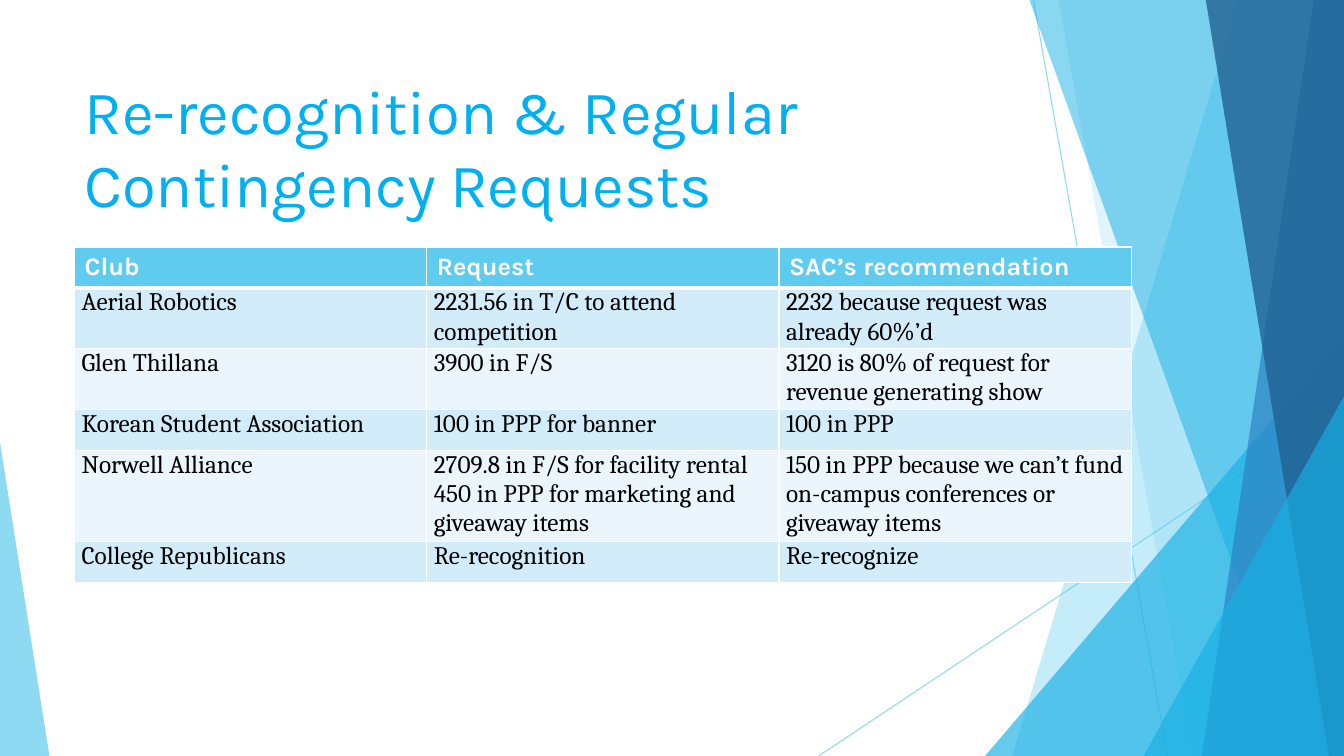
from lxml import etree
from pptx import Presentation
from pptx.dml.color import RGBColor
from pptx.enum.shapes import MSO_CONNECTOR, MSO_SHAPE
from pptx.enum.text import MSO_ANCHOR
from pptx.oxml import parse_xml
from pptx.oxml.ns import nsdecls, qn
from pptx.util import Inches, Pt

SLIDE_W, SLIDE_H = 13.33, 7.5
SKY, AZURE, BLUE, NAVY = "5FCBEF", "17B0E4", "2E83C3", "226292"
WHITE, BLACK, TITLE_BLUE = "FFFFFF", "000000", "00B0F0"
BAND_DARK, BAND_LIGHT = "D2ECF9", "EAF6FC"

HEADINGS = ["Club", "Request", "SAC’s recommendation"]
REQUESTS = [
    ["Aerial Robotics", "2231.56 in T/C to attend competition",
     "2232 because request was already 60%’d"],
    ["Glen Thillana", "3900 in F/S",
     "3120 is 80% of request for revenue generating show"],
    ["Korean Student Association", "100 in PPP for banner", "100 in PPP"],
    ["Norwell Alliance",
     "2709.8 in F/S for facility rental\n"
     "450 in PPP for marketing and giveaway items",
     "150 in PPP because we can’t fund on-campus conferences or giveaway items"],
    ["College Republicans", "Re-recognition", "Re-recognize"],
]


def rgb(colour):
    return RGBColor.from_string(colour)


def set_opacity(fill_owner, percent):
    """Add an alpha value to the solid colour just set on a fill or line."""
    colour = next(fill_owner.iter(qn("a:srgbClr")))
    etree.SubElement(colour, qn("a:alpha")).set("val", str(percent * 1000))


def paint(shape, colour, opacity):
    shape.shadow.inherit = False
    shape.fill.solid()
    shape.fill.fore_color.rgb = rgb(colour)
    set_opacity(shape.fill._xPr, opacity)
    shape.line.fill.background()


def add_hairline(slide, x1, y1, x2, y2):
    hairline = slide.shapes.add_connector(
        MSO_CONNECTOR.STRAIGHT, Inches(x1), Inches(y1), Inches(x2), Inches(y2))
    hairline.line.width = Pt(0.75)
    hairline.line.color.rgb = rgb(SKY)
    properties = hairline._element.spPr
    set_opacity(properties, 70)
    etree.SubElement(properties, qn("a:effectLst"))


def add_panel(slide, top_x, bottom_x, colour, opacity):
    """Full-height panel with a slanted left side, up to the right slide edge."""
    outline = slide.shapes.build_freeform(Inches(top_x), 0)
    outline.add_line_segments(
        [(Inches(x), Inches(y)) for x, y in
         [(SLIDE_W, 0), (SLIDE_W, SLIDE_H), (bottom_x, SLIDE_H)]], close=True)
    paint(outline.convert_to_shape(), colour, opacity)


def add_corner(slide, left, top, width, apex, colour, opacity):
    """Right triangle on the bottom edge; apex 0 is left, 1 is right."""
    corner = slide.shapes.add_shape(
        MSO_SHAPE.ISOSCELES_TRIANGLE, Inches(left), Inches(top),
        Inches(width), Inches(SLIDE_H - top))
    corner.adjustments[0] = apex
    paint(corner, colour, opacity)


def add_backdrop(slide):
    add_hairline(slide, 10.25, 0, 11.58, SLIDE_H)
    add_hairline(slide, SLIDE_W, 4.03, 8.12, SLIDE_H)
    add_panel(slide, 12.28, 10.04, SKY, 36)
    add_panel(slide, 10.5, 11.83, SKY, 20)
    add_corner(slide, 9.77, 3.33, 3.56, 1, AZURE, 66)
    add_panel(slide, 10.21, 12.91, AZURE, 50)
    add_panel(slide, 13.03, 11.92, BLUE, 70)
    add_panel(slide, 11.96, 13.18, NAVY, 80)
    add_corner(slide, 11.34, 3.93, 1.99, 1, AZURE, 66)
    add_corner(slide, 0, 4.39, 0.49, 0, SKY, 70)


def add_run(paragraph, text, size, font, colour, bold=False):
    run = paragraph.add_run()
    run.text = text
    run.font.size = Pt(size)
    run.font.name = font
    run.font.bold = bold
    run.font.color.rgb = rgb(colour)


def add_title(slide, left, top, width, height):
    title = slide.shapes.add_textbox(
        Inches(left), Inches(top), Inches(width), Inches(height)).text_frame
    title.word_wrap = True
    title.vertical_anchor = MSO_ANCHOR.TOP
    add_run(title.paragraphs[0], "Re-recognition & Regular Contingency Requests",
            44, "Karla", TITLE_BLUE)


def set_borders(cell, top, bottom):
    properties = cell._tc.get_or_add_tcPr()
    widths = {"lnL": 1, "lnR": 1, "lnT": top, "lnB": bottom}
    for position, (side, width) in enumerate(widths.items()):
        properties.insert(position, parse_xml(
            f'<a:{side} {nsdecls("a")} w="{Pt(width)}"><a:solidFill>'
            f'<a:srgbClr val="{WHITE}"/></a:solidFill></a:{side}>'))


def fill_cell(cell, text, band, font, colour, bold):
    cell.fill.solid()
    cell.fill.fore_color.rgb = rgb(band)
    for number, line in enumerate(text.split("\n")):
        frame = cell.text_frame
        paragraph = frame.add_paragraph() if number else frame.paragraphs[0]
        add_run(paragraph, line, 18, font, colour, bold)


def add_requests_table(slide, left, top, width, row_height):
    rows = [HEADINGS] + REQUESTS
    table = slide.shapes.add_table(
        len(rows), len(HEADINGS), Inches(left), Inches(top),
        Inches(width), Inches(row_height * len(rows))).table
    for row_number, texts in enumerate(rows):
        table.rows[row_number].height = Inches(row_height)
        for column, text in enumerate(texts):
            cell = table.cell(row_number, column)
            if row_number == 0:
                fill_cell(cell, text, SKY, "Karla", WHITE, True)
                set_borders(cell, 1, 3)
                continue
            band = BAND_DARK if row_number % 2 else BAND_LIGHT
            fill_cell(cell, text, band, "Cambria", BLACK, False)
            cell.margin_left = cell.margin_right = Inches(0.07)
            cell.margin_top = cell.margin_bottom = 0
            set_borders(cell, 3 if row_number == 1 else 1, 1)


def main():
    presentation = Presentation()
    presentation.slide_width = Inches(SLIDE_W)
    presentation.slide_height = Inches(SLIDE_H)
    slide = presentation.slides.add_slide(presentation.slide_layouts[6])
    add_backdrop(slide)
    add_title(slide, 0.74, 0.67, 9.4, 1.44)
    add_requests_table(slide, 0.74, 2.45, 10.48, 0.41)
    presentation.save("out.pptx")


if __name__ == "__main__":
    main()
